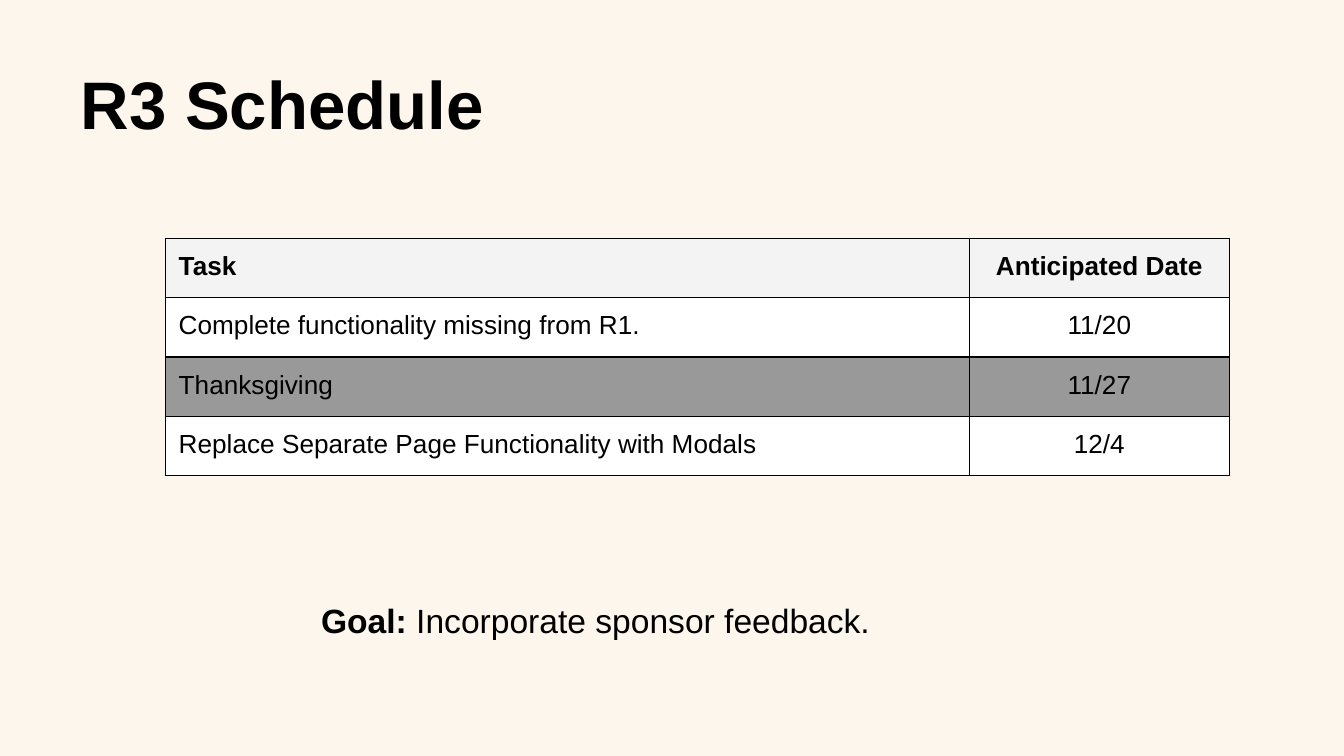
from lxml import etree
from pptx import Presentation, util as u
from pptx.dml.color import RGBColor
from pptx.enum import text
from pptx.oxml import ns

GRID = 0.1  # inches per grid square
COLUMNS, ROWS = 100, 56.25
INSET = 1

SCHEDULE = [
    ("Task", "Anticipated Date", "F3F3F3"),
    ("Complete functionality missing from R1.", "11/20", "FFFFFF"),
    ("Thanksgiving", "11/27", "999999"),
    ("Replace Separate Page Functionality with Modals", "12/4", "FFFFFF"),
]


def squares(count):
    """Turn a count of grid squares into a length."""
    return u.Emu(round(count * u.Inches(GRID)))


def color(value):
    return RGBColor.from_string(value)


class SlideBuilder:
    font, ink, line_width = "Arial", "000000", 0.75

    def __init__(self, deck, background):
        self.page = deck.slides.add_slide(deck.slide_layouts[5])
        fill = self.page.background.fill
        fill.solid()
        fill.fore_color.rgb = color(background)

    def style(self, span, size, bold=False):
        span.font.name = self.font
        span.font.size = u.Pt(size)
        span.font.bold = bold
        span.font.color.rgb = color(self.ink)

    def inset(self, target):
        """Give a text frame or a table cell equal margins."""
        for side in ("left", "top", "right", "bottom"):
            setattr(target, f"margin_{side}", squares(INSET))

    def title(self, words, left, top, width, height, size):
        box = self.page.shapes.title
        box.left, box.top = squares(left), squares(top)
        box.width, box.height = squares(width), squares(height)
        frame = box.text_frame
        frame.text = words
        frame.word_wrap = True
        frame.auto_size = text.MSO_AUTO_SIZE.NONE
        frame.vertical_anchor = text.MSO_ANCHOR.BOTTOM
        self.inset(frame)
        para = frame.paragraphs[0]
        para.alignment = text.PP_ALIGN.LEFT
        self.style(para.runs[0], size, bold=True)

    def labelled_text(self, label, words, left, top, width, height, size):
        box = self.page.shapes.add_textbox(*map(squares, (left, top, width, height)))
        frame = box.text_frame
        frame.word_wrap = True
        self.inset(frame)
        para = frame.paragraphs[0]
        for part, bold in ((label, True), (words, False)):
            span = para.add_run()
            span.text = part
            self.style(span, size, bold)

    def border(self, cell):
        properties = cell._tc.get_or_add_tcPr()
        for index, side in enumerate(("lnL", "lnR", "lnT", "lnB")):
            line = etree.Element(ns.qn(f"a:{side}"), w=str(u.Pt(self.line_width)))
            fill = etree.SubElement(line, ns.qn("a:solidFill"))
            etree.SubElement(fill, ns.qn("a:srgbClr"), val=self.ink)
            properties.insert(index, line)

    def cell(self, cell, words, fill, align, size, bold):
        cell.fill.solid()
        cell.fill.fore_color.rgb = color(fill)
        self.inset(cell)
        self.border(cell)
        cell.text = words
        para = cell.text_frame.paragraphs[0]
        para.alignment = align
        self.style(para.runs[0], size, bold)

    def schedule(self, rows, left, top, widths, row_height, size):
        frame = self.page.shapes.add_table(
            len(rows), len(widths), squares(left), squares(top),
            squares(sum(widths)), squares(row_height * len(rows)))
        table = frame.table
        for column, width in zip(table.columns, widths):
            column.width = squares(width)
        aligns = (text.PP_ALIGN.LEFT, text.PP_ALIGN.CENTER)
        for row, (*words, fill) in enumerate(rows):
            for column, (entry, align) in enumerate(zip(words, aligns)):
                self.cell(table.cell(row, column), entry, fill, align, size, bold=row == 0)


def main():
    deck = Presentation()
    deck.slide_width, deck.slide_height = squares(COLUMNS), squares(ROWS)
    slide = SlideBuilder(deck, "FCF6ED")
    slide.title("R3 Schedule", 5, 2.25, 90, 9.38, size=36)
    slide.schedule(SCHEDULE, 12.3, 17.74, widths=(59.83, 19.34), row_height=4.41, size=14)
    slide.labelled_text("Goal: ", "Incorporate sponsor feedback.", 22.9, 43.65, 56.8, 8.3, size=18)
    deck.save("out.pptx")


if __name__ == "__main__":
    main()
